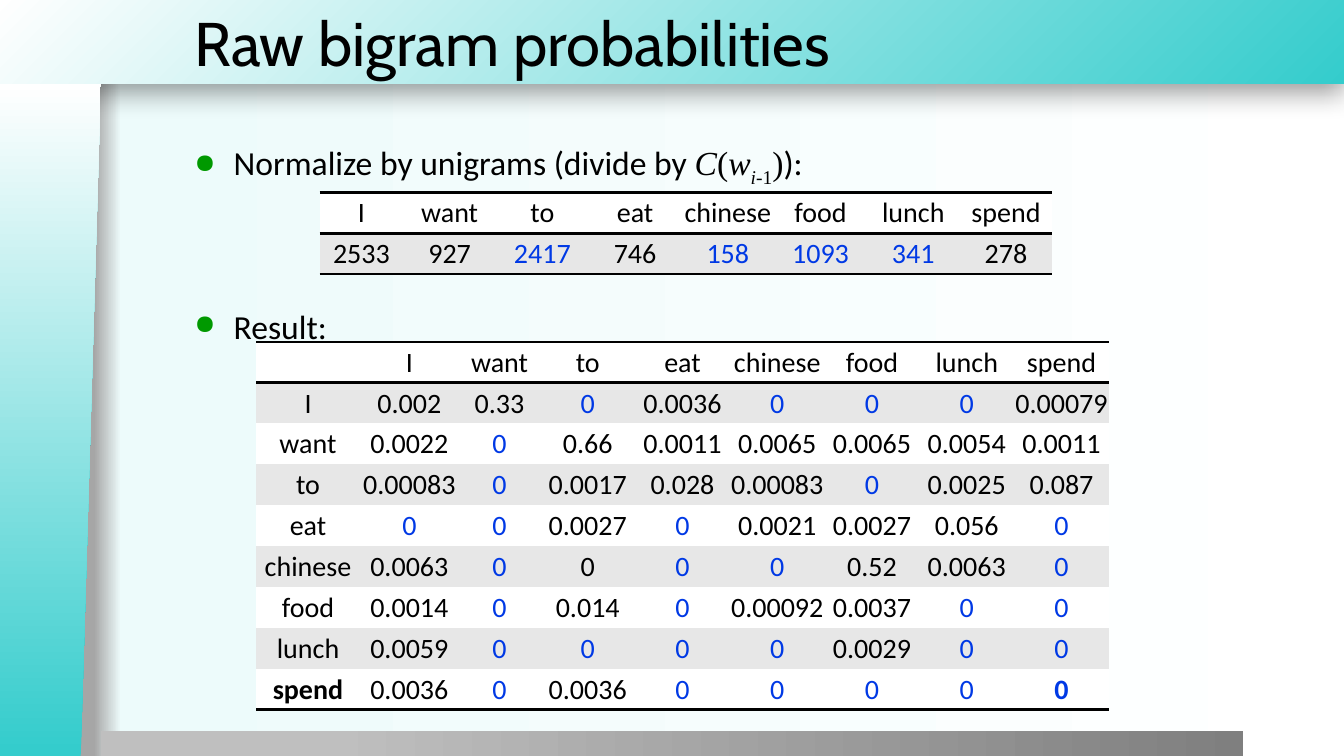
from lxml.etree import SubElement as Sub
from pptx import Presentation
from pptx.dml.color import RGBColor
from pptx.enum.shapes import MSO_SHAPE as Kind
from pptx.enum.text import MSO_ANCHOR as Anchor, PP_ALIGN as Align
from pptx.oxml import parse_xml
from pptx.oxml.ns import nsdecls, qn
from pptx.util import Inches, Pt

# Content
TITLE = "Raw bigram probabilities"
# Each run: text, font, italic, subscript
MATH = "Times New Roman"
BULLETS = [
    [("Normalize by unigrams (divide by ", "Calibri", False, False),
     ("C", MATH, True, False), ("(", MATH, False, False),
     ("w", MATH, True, False), ("i", MATH, True, True),
     ("-1", MATH, False, True), (")", MATH, False, False),
     ("):", "Calibri", False, False)],
    [("Result:", "Calibri", False, False)],
]
WORDS = ["I", "want", "to", "eat", "chinese", "food", "lunch", "spend"]
COUNTS = ["2533", "927", "2417", "746", "158", "1093", "341", "278"]
PROBS = [
    ["0.002", "0.33", "0", "0.0036", "0", "0", "0", "0.00079"],
    ["0.0022", "0", "0.66", "0.0011", "0.0065", "0.0065", "0.0054", "0.0011"],
    ["0.00083", "0", "0.0017", "0.028", "0.00083", "0", "0.0025", "0.087"],
    ["0", "0", "0.0027", "0", "0.0021", "0.0027", "0.056", "0"],
    ["0.0063", "0", "0", "0", "0", "0.52", "0.0063", "0"],
    ["0.0014", "0", "0.014", "0", "0.00092", "0.0037", "0", "0"],
    ["0.0059", "0", "0", "0", "0", "0.0029", "0", "0"],
    ["0.0036", "0", "0.0036", "0", "0", "0", "0", "0"],
]
COLORS = {"text": "000000", "blue": "0039E5", "dot": "009900", "teal": "34CCCC",
          "white": "FFFFFF", "band": "E7E7E7", "edge": "A6A6A6",
          "mint": "EDFBFB", "light": "BFBFBF", "dark": "7F7F7F"}
NO_STYLE = "{2D5ABB26-0587-4C30-8999-92F81FD0307C}"

prs = Presentation()
prs.slide_width, prs.slide_height = Inches(13.33), Inches(7.5)
slide = prs.slides.add_slide(prs.slide_layouts[6])
shapes = slide.shapes


def rgb(name):
    return RGBColor.from_string(COLORS[name])


def blend(stops, round_=False):
    """Gradient fill from (percent, color) stops."""
    marks = "".join(f'<a:gs pos="{pos * 1000}"><a:srgbClr val="{COLORS[name]}"/></a:gs>'
                    for pos, name in stops)
    way = ('<a:path path="circle"><a:fillToRect l="100000" t="100000"/></a:path>'
           if round_ else '<a:lin ang="0" scaled="0"/>')
    return parse_xml(f'<a:gradFill {nsdecls("a")} rotWithShape="1">'
                     f'<a:gsLst>{marks}</a:gsLst>{way}</a:gradFill>')


def swap(fill, holder, grad):
    """Put a gradient in the place of a plain fill."""
    fill.solid()
    holder.replace(holder.find(qn("a:solidFill")), grad)


def panel(kind, box, grad):
    shape = shapes.add_shape(kind, *map(Inches, box))
    shape.shadow.inherit = False
    shape.line.fill.background()
    swap(shape.fill, shape.element.spPr, grad)
    return shape


def style(run, size, font, color="text"):
    run.font.size, run.font.name = Pt(size), font
    run.font.color.rgb = rgb(color)


def textbox(box):
    frame = shapes.add_textbox(*map(Inches, box)).text_frame
    frame.word_wrap = True
    return frame


def grid(left, top, height, widths, rows, blue, bold=()):
    """Centred table with rules above and below the head and at the foot."""
    frame = shapes.add_table(len(rows), len(widths), Inches(left), Inches(top),
                             Inches(sum(widths)), Inches(height))
    table = frame.table
    table.first_row = table.horz_banding = False
    table._tbl.tblPr.find(qn("a:tableStyleId")).text = NO_STYLE
    for col, width in zip(table.columns, widths):
        col.width = Inches(width)
    for r, row in enumerate(rows):
        table.rows[r].height = Inches(height / len(rows))
        for c, text in enumerate(row):
            cell = table.cell(r, c)
            cell.margin_left = cell.margin_right = cell.margin_top = Inches(0.01)
            cell.margin_bottom = 0
            cell.vertical_anchor = Anchor.MIDDLE
            cell.fill.solid()
            cell.fill.fore_color.rgb = rgb("band" if r % 2 else "white")
            sides = ["lnB"] if r in (0, len(rows) - 1) else []
            if r == 0:
                sides.append("lnT")
            for side in sides:
                cell._tc.tcPr.insert(0, parse_xml(
                    f'<a:{side} {nsdecls("a")} w="25400"><a:solidFill>'
                    f'<a:srgbClr val="{COLORS["text"]}"/></a:solidFill></a:{side}>'))
            para = cell.text_frame.paragraphs[0]
            para.text, para.alignment = text, Align.CENTER
            for run in para.runs:
                style(run, 20, "Calibri", "blue" if (r, c) in blue else "text")
                run.font.bold = (r, c) in bold


# Background and frame panels
back = slide.background.fill
back.solid()
swap(back, slide.element.find(".//" + qn("p:bgPr")),
     blend([(7, "edge"), (9, "mint"), (100, "white")]))

head = panel(Kind.RECTANGLE, (-0.01, 0, 13.34, 0.83),
             blend([(0, "teal"), (100, "white")], True))
glow = Sub(head.element.spPr.find(qn("a:effectLst")), qn("a:outerShdw"),
           blurRad=str(Pt(20)), dist=str(Pt(6)), dir="5400000",
           algn="t", rotWithShape="0")
tint = Sub(glow, qn("a:srgbClr"), val=COLORS["text"])
Sub(tint, qn("a:alpha"), val="40000")

panel(Kind.RECTANGLE, (1, 7.25, 11.33, 0.26), blend([(20, "light"), (100, "dark")]))
side = panel(Kind.FLOWCHART_MANUAL_INPUT, (-2.84, 3.67, 6.68, 1),
             blend([(1, "teal"), (100, "white")]))
side.rotation = 270
side.element.spPr.find(qn("a:xfrm")).set("flipV", "1")

# Title
frame = textbox((1.83, 0, 11.5, 0.83))
frame.vertical_anchor = Anchor.MIDDLE
frame.text = TITLE
style(frame.paragraphs[0].runs[0], 44, "Cabin")

# Bullets
frame = textbox((1.83, 1.36, 10.5, 2.03))
for n, parts in enumerate(BULLETS):
    para = frame.add_paragraph() if n else frame.paragraphs[0]
    para.space_before = Pt(84 * n)
    props = para._p.get_or_add_pPr()
    props.set("marL", str(Inches(0.39)))
    props.set("indent", str(-Inches(0.39)))
    Sub(Sub(props, qn("a:buClr")), qn("a:srgbClr"), val=COLORS["dot"])
    Sub(props, qn("a:buSzPct"), val="80000")
    Sub(props, qn("a:buChar"), char="●")
    for text, font, slant, low in parts:
        run = para.add_run()
        run.text = text
        style(run, 24, font)
        run.font.italic = slant
        if low:
            run.font._element.set("baseline", "-25000")

# Unigram counts
grid(3.17, 1.91, 0.81, [0.83] + [0.92] * 7, [WORDS, COUNTS],
     {(1, c) for c in (2, 4, 5, 6)})

# Bigram probabilities: zeros are blue, save the one for "chinese to"
rows = [[""] + WORDS] + [[word] + probs for word, probs in zip(WORDS, PROBS)]
zeros = {(r, c) for r, row in enumerate(rows) for c, text in enumerate(row)
         if text == "0"} - {(5, 3)}
grid(2.54, 3.39, 3.65, [1.03, 0.98, 0.81] + [0.94] * 6, rows, zeros, {(8, 0), (8, 8)})

prs.save("out.pptx")
